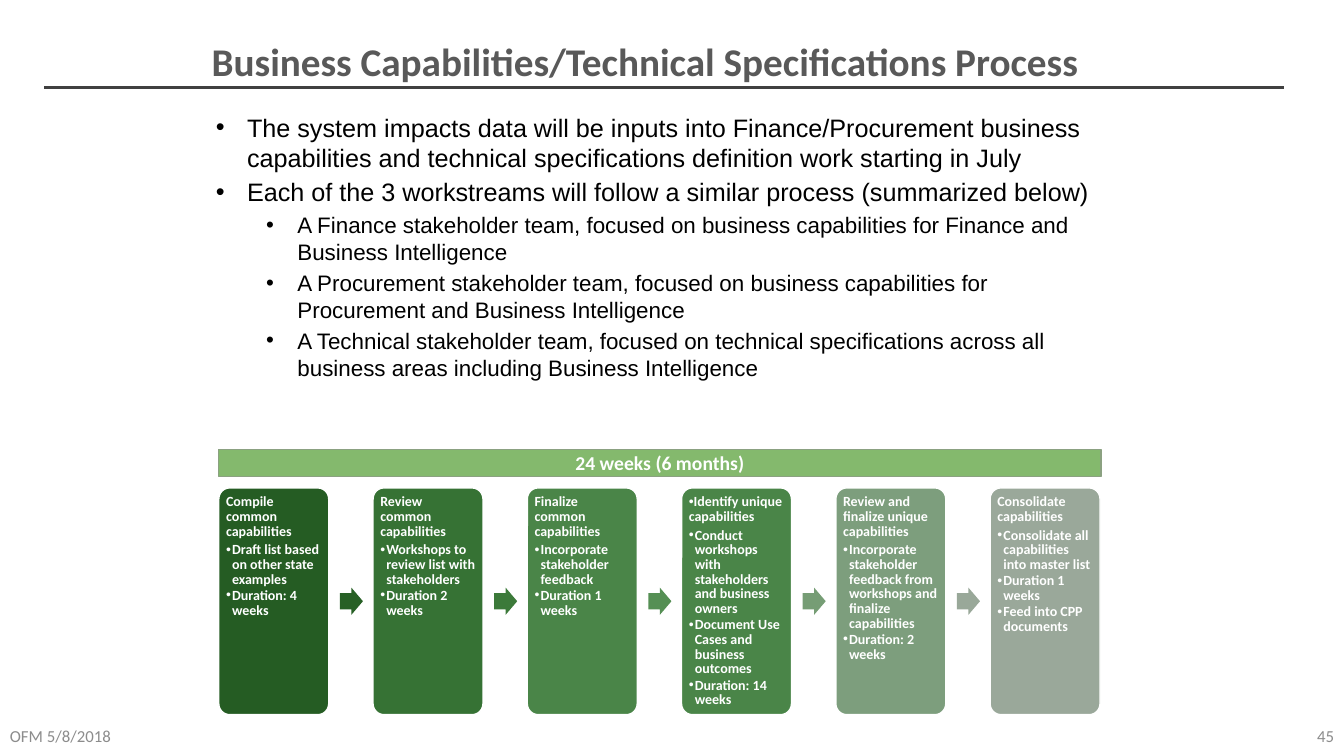
from lxml import etree
from pptx import Presentation
from pptx.dml.color import RGBColor
from pptx.enum.shapes import MSO_CONNECTOR, MSO_SHAPE
from pptx.enum.text import MSO_ANCHOR, MSO_AUTO_SIZE, PP_ALIGN
from pptx.oxml.ns import qn
from pptx.util import Inches, Pt

STRAIGHT = MSO_CONNECTOR.STRAIGHT
RECT = MSO_SHAPE.RECTANGLE
ROUNDED = MSO_SHAPE.ROUNDED_RECTANGLE
ARROW = MSO_SHAPE.RIGHT_ARROW
TOP, MIDDLE = MSO_ANCHOR.TOP, MSO_ANCHOR.MIDDLE
LEFT, CENTER, RIGHT = PP_ALIGN.LEFT, PP_ALIGN.CENTER, PP_ALIGN.RIGHT
NO_AUTOFIT = MSO_AUTO_SIZE.NONE

TITLE = "Business Capabilities/Technical Specifications Process"

# (level, text)
BODY = [
    (0, "The system impacts data will be inputs into Finance/Procurement business "
        "capabilities and technical specifications definition work starting in July"),
    (0, "Each of the 3 workstreams will follow a similar process (summarized below)"),
    (1, "A Finance stakeholder team, focused on business capabilities for Finance "
        "and Business Intelligence"),
    (1, "A Procurement stakeholder team, focused on business capabilities for "
        "Procurement and Business Intelligence"),
    (1, "A Technical stakeholder team, focused on technical specifications across "
        "all business areas including Business Intelligence"),
]

# (box colour, colour of the arrow after it, heading has a bullet, heading, items)
STEPS = [
    ("255C23", "276025", False, "Compile common capabilities",
     ["Draft list based on other state examples", "Duration: 4 weeks"]),
    ("367234", "3C7A3A", False, "Review common capabilities",
     ["Workshops to review list with stakeholders", "Duration 2 weeks"]),
    ("4A8548", "558F54", False, "Finalize common capabilities",
     ["Incorporate stakeholder feedback", "Duration 1 weeks"]),
    ("4A8548", "769D75", True, "Identify unique capabilities",
     ["Conduct workshops with stakeholders and business owners",
      "Document Use Cases and business outcomes", "Duration: 14 weeks"]),
    ("7D9E7D", "99A899", False, "Review and finalize unique capabilities",
     ["Incorporate stakeholder feedback from workshops and finalize capabilities",
      "Duration: 2 weeks"]),
    ("9AA89A", None, False, "Consolidate capabilities",
     ["Consolidate all capabilities into master list", "Duration 1 weeks",
      "Feed into CPP documents"]),
]
STEP_LEFT, STEP_PITCH, ARROW_OFFSET = 2.17, 1.53, 1.2


def rgb(color):
    return RGBColor.from_string(color)


def place(s, left, top, width, height):
    s.left, s.top = Inches(left), Inches(top)
    s.width, s.height = Inches(width), Inches(height)


def style(p, size, color, font="Calibri", bold=False, align=LEFT):
    p.alignment = align
    for r in p.runs:
        r.font.name = font
        r.font.size = Pt(size)
        r.font.bold = bold
        r.font.color.rgb = rgb(color)


def space(p, after, line=1.0):
    p.space_before = Pt(0)
    p.space_after = Pt(after)
    p.line_spacing = line


def bullet(p, margin=0, hanging=0):
    pPr = p._p.get_or_add_pPr()
    pPr.set("marL", str(Inches(margin)))
    pPr.set("indent", str(Inches(-hanging)))
    etree.SubElement(pPr, qn("a:buFont")).set("typeface", "Arial")
    etree.SubElement(pPr, qn("a:buChar")).set("char", "•")


def add_paragraphs(tf, texts):
    tf.text = texts[0]
    for text in texts[1:]:
        tf.add_paragraph().text = text
    return tf.paragraphs


def add_box(s, kind, box, fill, line=None):
    sp = s.shapes.add_shape(kind, *map(Inches, box))
    sp.shadow.inherit = False
    sp.fill.solid()
    sp.fill.fore_color.rgb = rgb(fill)
    if line:
        sp.line.color.rgb = rgb(line)
        sp.line.width = Pt(1)
    else:
        sp.line.fill.background()
    return sp


def add_rule(s, x1, x2, y):
    rule = s.shapes.add_connector(STRAIGHT, Inches(x1), Inches(y), Inches(x2), Inches(y))
    rule.line.color.rgb = rgb("404040")
    rule.line.width = Pt(2.25)
    etree.SubElement(rule._element.spPr, qn("a:effectLst"))


def add_footer(s, left, text, align):
    tf = s.shapes.add_textbox(Inches(left), Inches(7.1), Inches(3), Inches(0.4)).text_frame
    tf.word_wrap = True
    tf.vertical_anchor = MIDDLE
    tf.text = text
    style(tf.paragraphs[0], 12, "8C8C8C", align=align)


def fill_title(title):
    place(title, 2, 0.4, 9.27, 0.47)
    tf = title.text_frame
    tf.auto_size = NO_AUTOFIT
    tf.vertical_anchor = MIDDLE
    tf.text = TITLE
    style(tf.paragraphs[0], 28, "595959", bold=True)
    space(tf.paragraphs[0], 0, 0.9)


def fill_body(body):
    place(body, 2.04, 1.06, 9.18, 2.79)
    tf = body.text_frame
    tf.auto_size = NO_AUTOFIT
    paragraphs = add_paragraphs(tf, [text for _, text in BODY])
    for p, (level, _) in zip(paragraphs, BODY):
        p.level = level
        style(p, 18 - 2 * level, "000000", font="Arial")
        space(p, 3)
        bullet(p, 0.31 + 0.5 * level, 0.31)


def add_step(s, left, fill, heading_bullet, heading, items):
    sp = add_box(s, ROUNDED, (left, 4.84, 1.09, 2.25), fill, "FFFFFF")
    sp.adjustments[0] = 0.1
    tf = sp.text_frame
    tf.word_wrap = True
    tf.vertical_anchor = TOP
    tf.margin_left = tf.margin_right = tf.margin_top = tf.margin_bottom = Inches(0.04)
    # Spacing is tight enough for the longest step to end inside its box
    for i, p in enumerate(add_paragraphs(tf, [heading] + items)):
        style(p, 10, "FFFFFF", bold=True)
        space(p, 1.2 if i else 3, 0.87)
        if i:
            p.level = 1
            bullet(p, 0.06, 0.06)
        elif heading_bullet:
            bullet(p)


def add_arrow(s, left, fill):
    sp = add_box(s, ARROW, (left, 5.83, 0.23, 0.27), fill)
    sp.adjustments[0] = 0.6
    sp.adjustments[1] = 0.5


def main():
    prs = Presentation()
    prs.slide_width, prs.slide_height = Inches(13.33), Inches(7.5)
    s = prs.slides.add_slide(prs.slide_layouts[1])

    # Title, rule and footer
    fill_title(s.shapes.title)
    add_rule(s, 0.44, 12.73, 0.87)
    add_footer(s, 0, "OFM 5/8/2018", LEFT)
    add_footer(s, 10.33, "45", RIGHT)

    # Bulleted list
    fill_body(s.placeholders[1])

    # Process steps
    for i, (fill, arrow_fill, heading_bullet, heading, items) in enumerate(STEPS):
        left = STEP_LEFT + i * STEP_PITCH
        add_step(s, left, fill, heading_bullet, heading, items)
        if arrow_fill:
            add_arrow(s, left + ARROW_OFFSET, arrow_fill)

    # Duration bar
    bar = add_box(s, RECT, (STEP_LEFT, 4.46, 8.75, 0.27), "84B96D", "8BA181")
    bar.text_frame.vertical_anchor = MIDDLE
    bar.text_frame.text = "24 weeks (6 months)"
    style(bar.text_frame.paragraphs[0], 14, "FFFFFF", bold=True, align=CENTER)

    prs.save("out.pptx")


if __name__ == "__main__":
    main()
